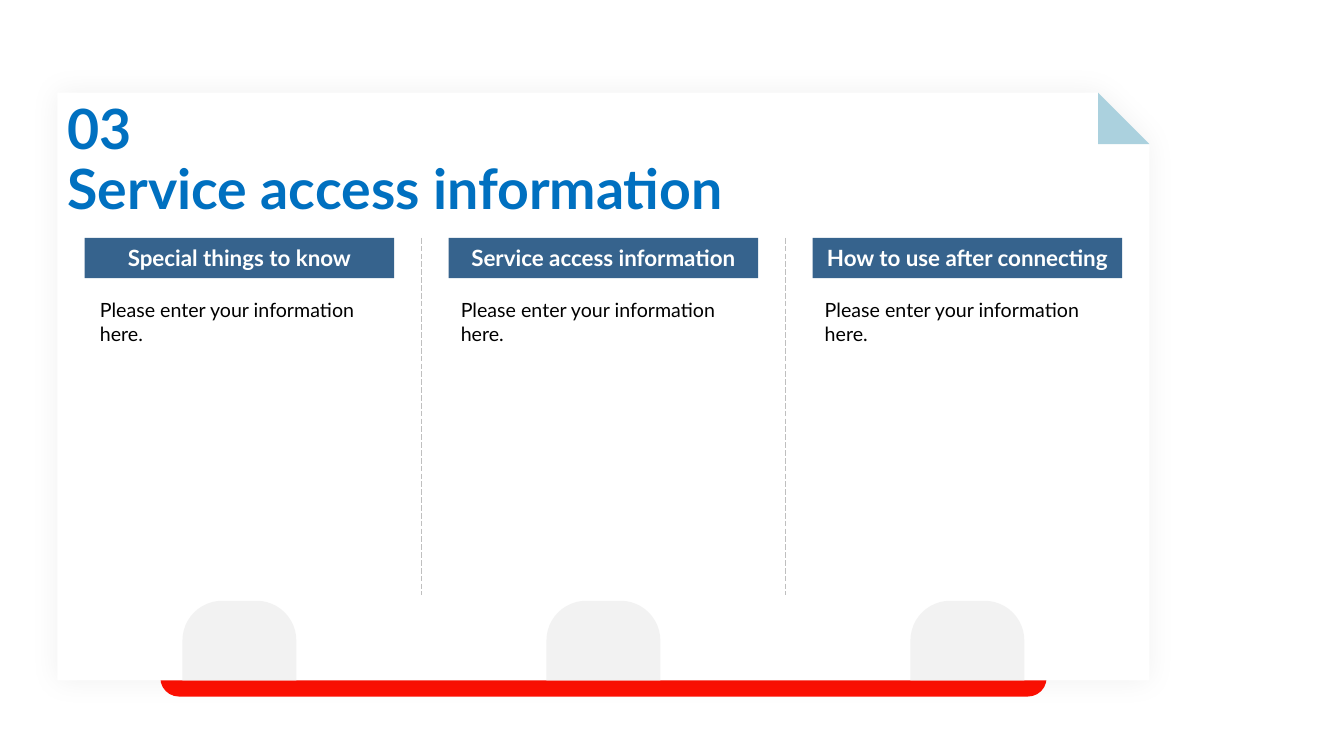
import pptx
import pptx.dml.color
import pptx.enum.dml
import pptx.enum.shapes
import pptx.enum.text
import pptx.oxml
import pptx.oxml.ns
import pptx.util
from pptx.util import Inches

SHAPE = pptx.enum.shapes.MSO_SHAPE
ANCHOR = pptx.enum.text.MSO_ANCHOR
ALIGN = pptx.enum.text.PP_ALIGN

COLUMN_LEFT = 0.84
COLUMN_STEP = 3.61
HEADER_TOP = 2.36
HEADER_WIDTH = 3.07
PAPER = dict(left=0.57, top=0.92, right=11.4, bottom=6.75, fold=0.51)
HEADERS = [
    "Special things to know",
    "Service access information",
    "How to use after connecting",
]
BODY_LEFTS = [0.87, 4.45, 8.06]
BODY_TEXT = "Please enter your information here."


def color(value):
    return pptx.dml.color.RGBColor.from_string(value)


def apply_format(target, values):
    """Set each attribute named in values on target."""
    for name, value in values.items():
        setattr(target, name, value)


class SlideBuilder:
    def __init__(self, slide, font_name):
        self.slide = slide
        self.shapes = slide.shapes
        self.font_name = font_name

    def paint(self, shape, fill):
        shape.shadow.inherit = False
        shape.fill.solid()
        shape.fill.fore_color.rgb = color(fill)
        shape.line.fill.background()

    def set_text(self, shape, text, size, text_color, bold=False, frame=None, paragraph_format=None):
        text_frame = shape.text_frame
        apply_format(text_frame, frame or {})
        paragraph = text_frame.paragraphs[0]
        paragraph.text = text
        apply_format(paragraph, paragraph_format or {})
        for run in paragraph.runs:
            apply_format(run.font, dict(name=self.font_name, size=pptx.util.Pt(size), bold=bold))
            run.font.color.rgb = color(text_color)

    def shape(self, kind, left, top, width, height, fill, adjustments=()):
        shape = self.shapes.add_shape(kind, Inches(left), Inches(top), Inches(width), Inches(height))
        for index, value in enumerate(adjustments):
            shape.adjustments[index] = value
        self.paint(shape, fill)
        return shape

    def paper(self, left, top, right, bottom, fold, fill):
        """Draw a sheet with its top right corner cut and a soft shadow."""
        outline = self.shapes.build_freeform(Inches(left), Inches(top))
        corners = [(right - fold, top), (right, top + fold), (right, bottom), (left, bottom)]
        outline.add_line_segments([(Inches(x), Inches(y)) for x, y in corners], close=True)
        paper = outline.convert_to_shape()
        self.paint(paper, fill)
        effects = paper._element.spPr.find(pptx.oxml.ns.qn("a:effectLst"))
        effects.append(pptx.oxml.parse_xml(
            f'<a:outerShdw {pptx.oxml.ns.nsdecls("a")} blurRad="{pptx.util.Pt(20)}" dist="0" dir="0" '
            'algn="ctr" rotWithShape="0"><a:srgbClr val="000000"><a:alpha val="5000"/></a:srgbClr>'
            '</a:outerShdw>'))
        return paper

    def title(self, text, left, top, width, height, above):
        """Format the title placeholder and stack it directly above a shape."""
        title = self.shapes.title
        apply_format(title, dict(left=Inches(left), top=Inches(top),
                                 width=Inches(width), height=Inches(height)))
        above._element.addnext(title._element)
        self.set_text(title, text, 39.6, "0070C0", bold=True,
                      frame=dict(vertical_anchor=ANCHOR.MIDDLE, word_wrap=True,
                                 auto_size=pptx.enum.text.MSO_AUTO_SIZE.NONE),
                      paragraph_format=dict(alignment=ALIGN.LEFT, line_spacing=0.9))

    def header(self, text, left):
        header = self.shape(SHAPE.RECTANGLE, left, HEADER_TOP, HEADER_WIDTH, 0.4, "36638D")
        self.set_text(header, text, 16, "FFFFFF", bold=True,
                      frame=dict(vertical_anchor=ANCHOR.MIDDLE, word_wrap=False),
                      paragraph_format=dict(alignment=ALIGN.CENTER))

    def body(self, text, left):
        box = self.shapes.add_textbox(Inches(left), Inches(2.96), Inches(3.05), Inches(0.85))
        self.set_text(box, text, 14, "000000",
                      frame=dict(word_wrap=True, margin_left=Inches(0.12), margin_right=Inches(0.12),
                                 margin_top=0, margin_bottom=0))

    def divider(self, x):
        divider = self.shapes.add_connector(
            pptx.enum.shapes.MSO_CONNECTOR.STRAIGHT,
            Inches(x), Inches(HEADER_TOP), Inches(x), Inches(5.9))
        apply_format(divider.line, dict(width=pptx.util.Pt(0.5),
                                        dash_style=pptx.enum.dml.MSO_LINE.LONG_DASH))
        divider.line.color.rgb = color("BFBFBF")
        divider._element.spPr.append(
            pptx.oxml.parse_xml(f'<a:effectLst {pptx.oxml.ns.nsdecls("a")}/>'))


def main():
    presentation = pptx.Presentation()
    presentation.slide_width = Inches(13.33)
    presentation.slide_height = Inches(7.5)
    title_only = presentation.slide_layouts[5]
    builder = SlideBuilder(presentation.slides.add_slide(title_only), "Lato")

    builder.shape(SHAPE.ROUND_2_SAME_RECTANGLE, 1.59, 6.49, 8.79, 0.42, "FE1003", (0, 0.44))
    paper = builder.paper(**PAPER, fill="FFFFFF")
    builder.title("03 \vService access information", 0.57, 1.05, 8.19, 1.1, above=paper)
    fold = PAPER["fold"]
    builder.shape(SHAPE.RIGHT_TRIANGLE, PAPER["right"] - fold, PAPER["top"], fold, fold, "ABD1DE")

    tab_width, tab_height = 1.13, 0.79
    for index, (header, body_left) in enumerate(zip(HEADERS, BODY_LEFTS)):
        left = COLUMN_LEFT + index * COLUMN_STEP
        builder.header(header, left)
        builder.body(BODY_TEXT, body_left)
        builder.shape(SHAPE.ROUND_2_SAME_RECTANGLE, left + (HEADER_WIDTH - tab_width) / 2,
                      PAPER["bottom"] - tab_height, tab_width, tab_height, "F2F2F2", (0.5, 0))
        if index:
            builder.divider(left - (COLUMN_STEP - HEADER_WIDTH) / 2)

    presentation.save("out.pptx")


if __name__ == "__main__":
    main()
